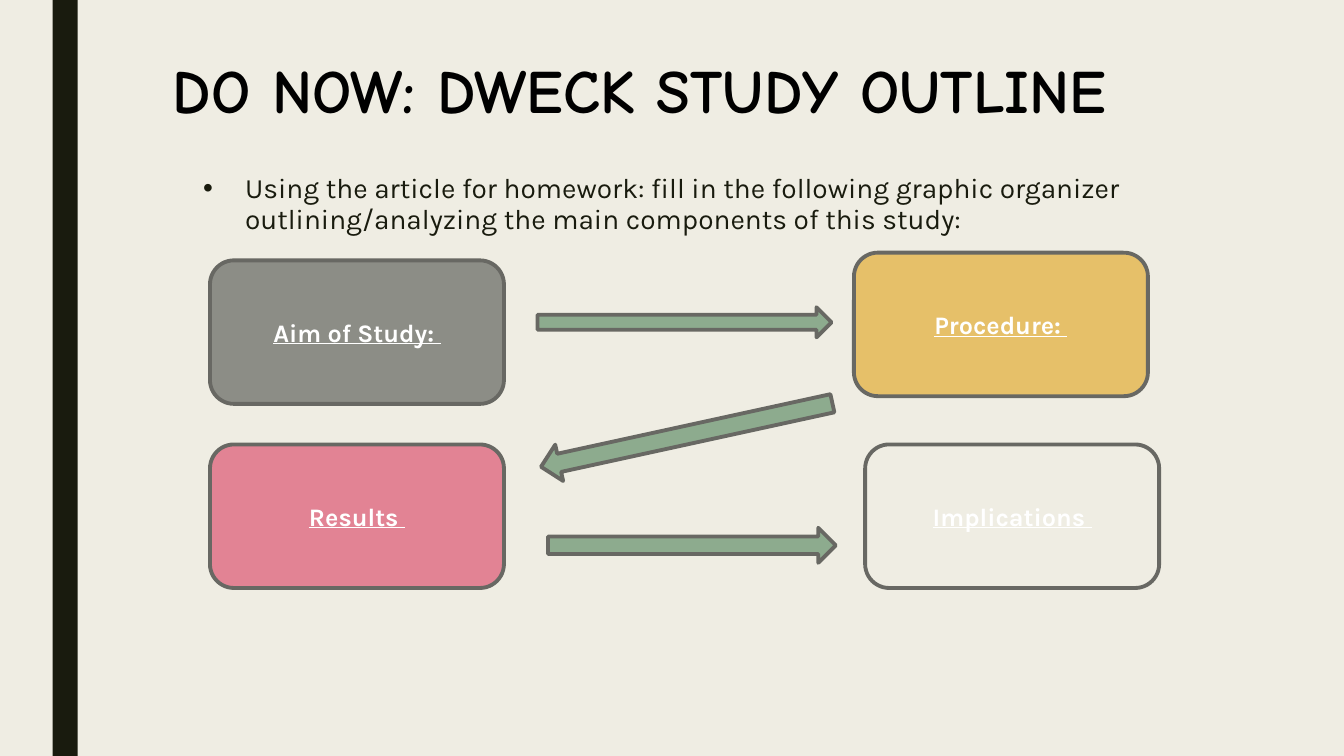
from typing import NamedTuple

from lxml import etree
from pptx import Presentation
from pptx.dml.color import RGBColor
from pptx.enum.shapes import MSO_SHAPE as SHAPE
from pptx.enum.text import MSO_ANCHOR as ANCHOR, PP_ALIGN as ALIGN
from pptx.oxml.ns import qn
from pptx.util import Pt

BACKGROUND = "EFEDE3"
INK = "191B0E"
WHITE = "FFFFFF"
OUTLINE = "686863"
ARROW_FILL = "8DAB8E"
BOX_WIDTH, BOX_HEIGHT = 210, 102.5


class Box(NamedTuple):
    label: str
    left: float
    top: float
    fill: str


class Arrow(NamedTuple):
    left: float
    top: float
    width: float
    height: float
    rotation: float = 0


BOXES = [
    Box("Aim of Study: ", 150, 186, "8C8D86"),
    Box("Procedure: ", 610, 180.5, "E6C069"),
    Box("Results ", 150, 317.5, "E28394"),
    Box("Implications ", 618, 317.5, BACKGROUND),
]
ARROWS = [
    Arrow(384, 219.5, 210, 21.5),
    Arrow(384, 297.5, 213, 26.5, rotation=167.7),
    Arrow(391.5, 377, 205.5, 25),
]


def color(value: str) -> RGBColor:
    return RGBColor.from_string(value)


def add_shape(slide, kind, left: float, top: float, width: float, height: float,
              fill: str, line: str | None = None):
    sp = slide.shapes.add_shape(kind, Pt(left), Pt(top), Pt(width), Pt(height))
    sp.shadow.inherit = False
    sp.fill.solid()
    sp.fill.fore_color.rgb = color(fill)
    if line:
        sp.line.color.rgb = color(line)
        sp.line.width = Pt(2.75)
    else:
        sp.line.fill.background()
    return sp


def write(sp, text: str, *, size: float, ink: str, font: str = "Karla", bold: bool = False,
          underline: bool = False, align=ALIGN.CENTER, anchor=ANCHOR.MIDDLE):
    """Put one formatted paragraph into a shape and return the paragraph."""
    tf = sp.text_frame
    tf.word_wrap = True
    tf.vertical_anchor = anchor
    p = tf.paragraphs[0]
    p.alignment = align
    r = p.add_run()
    r.text = text
    r.font.name = font
    r.font.size = Pt(size)
    r.font.bold = bold
    r.font.underline = underline
    r.font.color.rgb = color(ink)
    return p


def add_bullet(p, indent: float) -> None:
    pPr = p._p.get_or_add_pPr()
    pPr.set("marL", str(Pt(indent)))
    pPr.set("indent", str(-Pt(indent)))
    etree.SubElement(pPr, qn("a:buFont")).set("typeface", "Arial")
    etree.SubElement(pPr, qn("a:buChar")).set("char", "•")


def add_title(slide) -> None:
    sp = slide.shapes.add_textbox(Pt(120), Pt(42), Pt(690), Pt(43))
    sp.text_frame.margin_left = sp.text_frame.margin_right = 0
    write(sp, "DO NOW: DWECK STUDY OUTLINE ", size=44, ink="000000",
          font="Comic Neue", bold=True)


def add_instruction(slide) -> None:
    sp = slide.shapes.add_textbox(Pt(138), Pt(120), Pt(690), Pt(281.5))
    p = write(sp, "Using the article for homework: fill in the following graphic organizer "
              "outlining/analyzing the main components of this study:",
              size=20, ink=INK, align=ALIGN.LEFT, anchor=ANCHOR.TOP)
    p.line_spacing = 0.94
    p.space_before = Pt(10)
    p.space_after = Pt(2)
    add_bullet(p, 30)


def add_box(slide, box: Box) -> None:
    sp = add_shape(slide, SHAPE.ROUNDED_RECTANGLE, box.left, box.top,
                   BOX_WIDTH, BOX_HEIGHT, box.fill, OUTLINE)
    write(sp, box.label, size=18, ink=WHITE, bold=True, underline=True)


def add_arrow(slide, arrow: Arrow) -> None:
    sp = add_shape(slide, SHAPE.RIGHT_ARROW, arrow.left, arrow.top,
                   arrow.width, arrow.height, ARROW_FILL, OUTLINE)
    sp.rotation = arrow.rotation


def main() -> None:
    prs = Presentation()
    prs.slide_width, prs.slide_height = Pt(960), Pt(540)
    slide = prs.slides.add_slide(prs.slide_layouts[6])
    slide.background.fill.solid()
    slide.background.fill.fore_color.rgb = color(BACKGROUND)

    add_shape(slide, SHAPE.RECTANGLE, 37.5, 0, 18, 540, INK)
    add_title(slide)
    add_instruction(slide)
    for box in BOXES:
        add_box(slide, box)
    for arrow in ARROWS:
        add_arrow(slide, arrow)
    prs.save("out.pptx")


if __name__ == "__main__":
    main()
